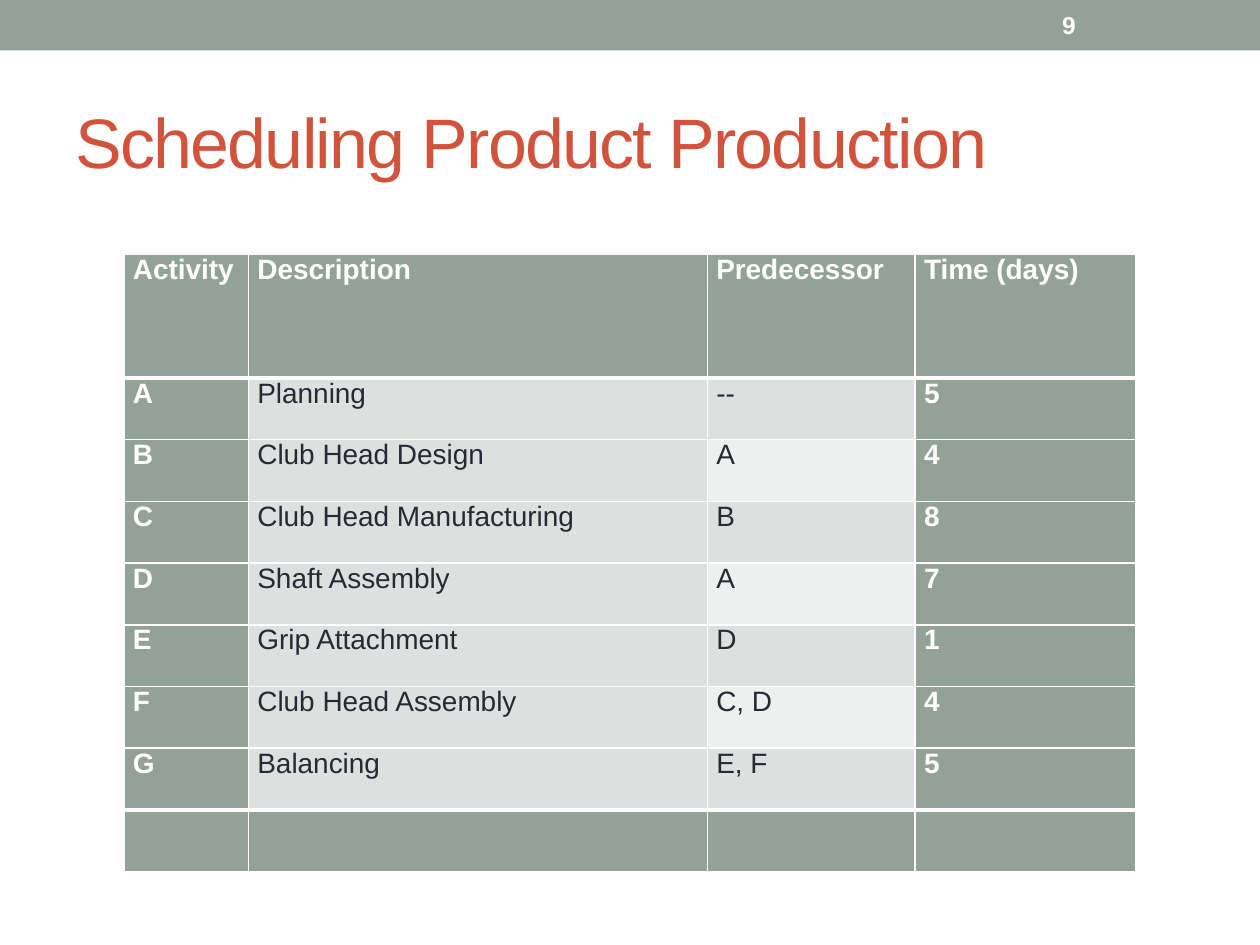
from lxml import etree
from pptx import Presentation
from pptx.dml.color import RGBColor
from pptx.enum.shapes import MSO_SHAPE
from pptx.enum.text import MSO_ANCHOR
from pptx.oxml.ns import qn
from pptx.util import Cm, Pt

RECTANGLE = MSO_SHAPE.RECTANGLE
MIDDLE = MSO_ANCHOR.MIDDLE

TITLE = "Scheduling Product Production"
PAGE_NUMBER = "9"
HEADINGS = ["Activity", "Description", "Predecessor", "Time (days)"]
ACTIVITIES = [
    ("A", "Planning", "--", "5"),
    ("B", "Club Head Design", "A", "4"),
    ("C", "Club Head Manufacturing", "B", "8"),
    ("D", "Shaft Assembly", "A", "7"),
    ("E", "Grip Attachment", "D", "1"),
    ("F", "Club Head Assembly", "C, D", "4"),
    ("G", "Balancing", "E, F", "5"),
]
TOTALS = ("", "", "", "")

THEME = {
    "font": "Arial",
    "sage": "93A299",
    "band_dark": "DCE0DE",
    "band_light": "EEF0EF",
    "rule": "FFFFFF",
    "title": {"size": 40, "color": "D2533C", "bold": False},
    "number": {"size": 14, "color": "FFFFFF", "bold": True},
    "strong": {"size": 16, "color": "FFFFFF", "bold": True},
    "body": {"size": 16, "color": "292934", "bold": False},
}

SLIDE_SIZE = (25.4, 19.05)
BAR_BOX = (0, 0, 25.4, 1.02)
TITLE_BOX = (1.27, 1.47, 22.86, 2.74)
NUMBER_BOX = (21.16, 0.05, 2.97, 0.91)
TABLE_LEFT, TABLE_TOP, TABLE_HEIGHT = 2.5, 5.13, 12.45
COLUMN_WIDTHS = [2.51, 9.25, 4.19, 4.45]
HEADER_UNITS = 2  # the header is as tall as two other rows
CELL_MARGINS = {"margin_left": 0.18, "margin_right": 0.18,
                "margin_top": 0, "margin_bottom": 0}
THIN, THICK = 1, 3


def lengths(values):
    return [Cm(value) for value in values]


def write_text(frame, text, style):
    run = frame.paragraphs[0].add_run()
    run.text = text
    formats = {"name": THEME["font"], "size": Pt(style["size"]), "bold": style["bold"]}
    for name, value in formats.items():
        setattr(run.font, name, value)
    run.font.color.rgb = RGBColor.from_string(style["color"])
    return run


def add_text(slide, box, text, style):
    frame = slide.shapes.add_textbox(*lengths(box)).text_frame
    frame.word_wrap = True
    frame.vertical_anchor = MIDDLE
    return write_text(frame, text, style)


def add_bar(slide):
    bar = slide.shapes.add_shape(RECTANGLE, *lengths(BAR_BOX))
    bar.shadow.inherit = False
    bar.fill.solid()
    bar.fill.fore_color.rgb = RGBColor.from_string(THEME["sage"])
    bar.line.fill.background()


def add_borders(cell, widths):
    """Add cell borders; call before filling, as the schema puts lines first."""
    properties = cell._tc.get_or_add_tcPr()
    for side, width in widths.items():
        line = etree.SubElement(properties, qn(f"a:ln{side}"), w=str(Pt(width)))
        fill = etree.SubElement(line, qn("a:solidFill"))
        etree.SubElement(fill, qn("a:srgbClr"), val=THEME["rule"])


def add_schedule(slide):
    rows = [HEADINGS, *ACTIVITIES, TOTALS]
    last_row, last_column = len(rows) - 1, len(HEADINGS) - 1
    unit = TABLE_HEIGHT / (last_row + HEADER_UNITS)
    table = slide.shapes.add_table(
        len(rows), len(HEADINGS),
        *lengths((TABLE_LEFT, TABLE_TOP, sum(COLUMN_WIDTHS), TABLE_HEIGHT))).table
    table.first_row = table.horz_banding = False
    for column, width in zip(table.columns, COLUMN_WIDTHS):
        column.width = Cm(width)

    for i, texts in enumerate(rows):
        table.rows[i].height = Cm(unit * (HEADER_UNITS if i == 0 else 1))
        for j, text in enumerate(texts):
            cell = table.cell(i, j)
            for name, value in CELL_MARGINS.items():
                setattr(cell, name, Cm(value))
            add_borders(cell, {"L": THIN, "R": THIN,
                               "T": THICK if i in (1, last_row) else THIN,
                               "B": THICK if i in (0, last_row - 1) else THIN})
            strong = i in (0, last_row) or j in (0, last_column)
            light = j == 2 and i % 2 == 0
            color = "sage" if strong else "band_light" if light else "band_dark"
            cell.fill.solid()
            cell.fill.fore_color.rgb = RGBColor.from_string(THEME[color])
            if text:
                write_text(cell.text_frame, text, THEME["strong" if strong else "body"])


def main():
    presentation = Presentation()
    presentation.slide_width, presentation.slide_height = lengths(SLIDE_SIZE)
    slide = presentation.slides.add_slide(presentation.slide_layouts[6])
    add_bar(slide)
    title = add_text(slide, TITLE_BOX, TITLE, THEME["title"])
    title.font._element.set("spc", "-100")
    add_schedule(slide)
    add_text(slide, NUMBER_BOX, PAGE_NUMBER, THEME["number"])
    presentation.save("out.pptx")


if __name__ == "__main__":
    main()
